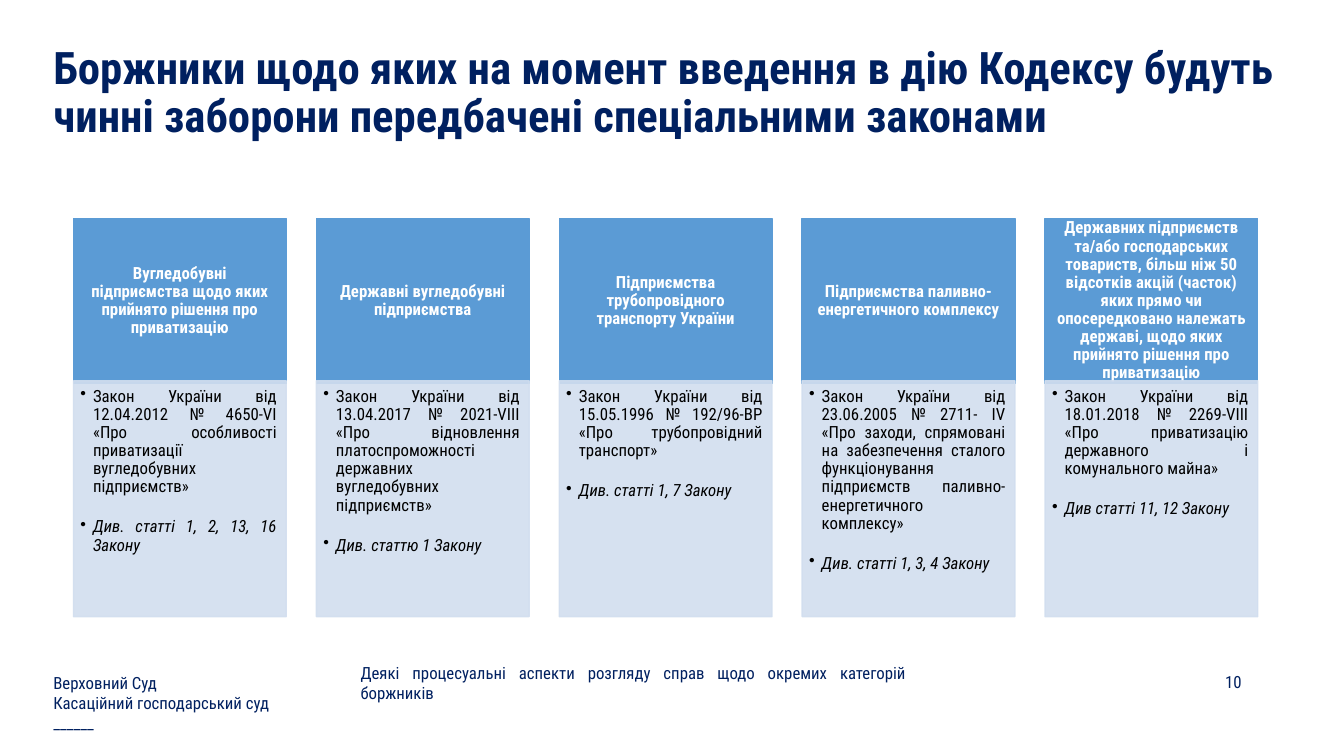
from dataclasses import dataclass

from lxml.etree import SubElement
from pptx import Presentation
from pptx.dml.color import RGBColor
from pptx.enum.shapes import MSO_SHAPE
from pptx.enum.text import MSO_ANCHOR, MSO_AUTO_SIZE, PP_ALIGN
from pptx.oxml.ns import qn
from pptx.util import Pt


@dataclass(frozen=True)
class Theme:
    font: str = "Roboto Condensed"
    navy: str = "002060"
    header_fill: str = "5B9BD5"
    header_text: str = "FFFFFF"
    body_fill: str = "D2DEEF"
    body_text: str = "000000"
    body_opacity: int = 90
    title_size: int = 32
    text_size: int = 12
    line_spacing: float = 0.9


class SlideBuilder:
    def __init__(self, slide, theme):
        self.slide = slide
        self.theme = theme

    def set_text(self, shape, lines, color, align, anchor, size=None, bold=False,
                 spacing=None, insets=(7.2, 3.6, 7.2, 3.6)):
        """Fill a shape with one paragraph per line and format it all alike."""
        frame = shape.text_frame
        frame.text = "\n".join(lines)
        frame.word_wrap = True
        frame.auto_size = MSO_AUTO_SIZE.NONE
        frame.vertical_anchor = anchor
        (frame.margin_left, frame.margin_top,
         frame.margin_right, frame.margin_bottom) = map(Pt, insets)
        for paragraph in frame.paragraphs:
            paragraph.alignment = align
            paragraph.line_spacing = spacing
            for run in paragraph.runs:
                run.font.name = self.theme.font
                run.font.size = Pt(size or self.theme.text_size)
                run.font.bold = bold
                run.font.color.rgb = RGBColor.from_string(color)
        return frame.paragraphs

    def title(self, text, box):
        heading = self.slide.shapes.title
        heading.left, heading.top, heading.width, heading.height = map(Pt, box)
        self.set_text(heading, [text], self.theme.navy, PP_ALIGN.LEFT,
                      MSO_ANCHOR.MIDDLE, self.theme.title_size, True,
                      self.theme.line_spacing)

    def footer(self, lines, box, align):
        note = self.slide.shapes.add_textbox(*map(Pt, box))
        self.set_text(note, lines, self.theme.navy, align, MSO_ANCHOR.MIDDLE)

    def panel(self, box, color, opacity=100):
        rectangle = self.slide.shapes.add_shape(MSO_SHAPE.RECTANGLE, *map(Pt, box))
        rectangle.shadow.inherit = False
        rectangle.fill.solid()
        rectangle.fill.fore_color.rgb = RGBColor.from_string(color)
        rectangle.line.color.rgb = RGBColor.from_string(color)
        rectangle.line.width = Pt(1)
        if opacity < 100:
            for tint in rectangle._element.spPr.iter(qn("a:srgbClr")):
                SubElement(tint, qn("a:alpha"), val=str(opacity * 1000))
        return rectangle

    def header(self, text, box):
        self.set_text(self.panel(box, self.theme.header_fill), [text],
                      self.theme.header_text, PP_ALIGN.CENTER, MSO_ANCHOR.MIDDLE,
                      bold=True, spacing=self.theme.line_spacing,
                      insets=(6.7, 3.8, 6.7, 3.8))

    def law_list(self, law, articles, box):
        """Draw a panel with two bullets: the law, then its articles in italics."""
        card = self.panel(box, self.theme.body_fill, self.theme.body_opacity)
        bullets = self.set_text(card, [law, articles], self.theme.body_text,
                                PP_ALIGN.JUSTIFY, MSO_ANCHOR.TOP,
                                spacing=self.theme.line_spacing,
                                insets=(5, 5, 6.7, 7.5))
        for bullet in bullets:
            properties = bullet._p.get_or_add_pPr()
            properties.set("marL", str(Pt(9)))
            properties.set("indent", str(-Pt(9)))
            SubElement(properties, qn("a:buChar"), char="•")
        bullets[1].space_before = Pt(15.6)
        bullets[1].runs[0].font.italic = True


COLUMNS = [
    ("Вугледобувні підприємства щодо яких прийнято рішення про приватизацію",
     "Закон України від 12.04.2012 № 4650-VІ «Про особливості приватизації "
     "вугледобувних підприємств»",
     "Див. статті 1, 2, 13, 16 Закону"),
    ("Державні вугледобувні підприємства",
     "Закон України від 13.04.2017 № 2021-VІІІ «Про відновлення "
     "платоспроможності державних вугледобувних підприємств»",
     "Див. статтю 1 Закону"),
    ("Підприємства трубопровідного транспорту України",
     "Закон України від 15.05.1996 № 192/96-ВР «Про трубопровідний транспорт»",
     "Див. статті 1, 7 Закону"),
    ("Підприємства паливно-енергетичного комплексу",
     "Закон України від 23.06.2005 № 2711- ІV «Про заходи, спрямовані на "
     "забезпечення сталого функціонування підприємств паливно-енергетичного "
     "комплексу»",
     "Див. статті 1, 3, 4 Закону"),
    ("Державних підприємств та/або господарських товариств, більш ніж 50 відсотків "
     "акцій (часток) яких прямо чи опосередковано належать державі, щодо яких "
     "прийнято рішення про приватизацію",
     "Закон України від 18.01.2018 № 2269-VІІІ «Про приватизацію державного і "
     "комунального майна»",
     "Див статті 11, 12 Закону"),
]
FIRST_LEFT, COLUMN_PITCH, COLUMN_WIDTH = 52.5, 173.5, 152
HEADER_TOP, HEADER_HEIGHT = 156, 118
BODY_TOP, BODY_HEIGHT = 272, 168.5
FOOTER_TOP = 475


def main():
    presentation = Presentation()
    presentation.slide_width, presentation.slide_height = Pt(960), Pt(540)
    title_only = presentation.slide_layouts[5]
    builder = SlideBuilder(presentation.slides.add_slide(title_only), Theme())

    builder.title("Боржники щодо яких на момент введення в дію Кодексу будуть "
                  "чинні заборони передбачені спеціальними законами",
                  (31, 30, 889, 74))
    builder.footer(["10"], (678, FOOTER_TOP, 216, 24), PP_ALIGN.RIGHT)
    builder.footer(["Верховний Суд", "Касаційний господарський суд", "______"],
                   (31, FOOTER_TOP, 183, 54), PP_ALIGN.LEFT)
    builder.footer(["Деякі процесуальні аспекти розгляду справ щодо окремих "
                    "категорій боржників"],
                   (250.5, FOOTER_TOP, 404, 25), PP_ALIGN.JUSTIFY)

    for index, (debtors, law, articles) in enumerate(COLUMNS):
        left = FIRST_LEFT + index * COLUMN_PITCH
        builder.header(debtors, (left, HEADER_TOP, COLUMN_WIDTH, HEADER_HEIGHT))
        builder.law_list(law, articles, (left, BODY_TOP, COLUMN_WIDTH, BODY_HEIGHT))

    presentation.save("out.pptx")


if __name__ == "__main__":
    main()
